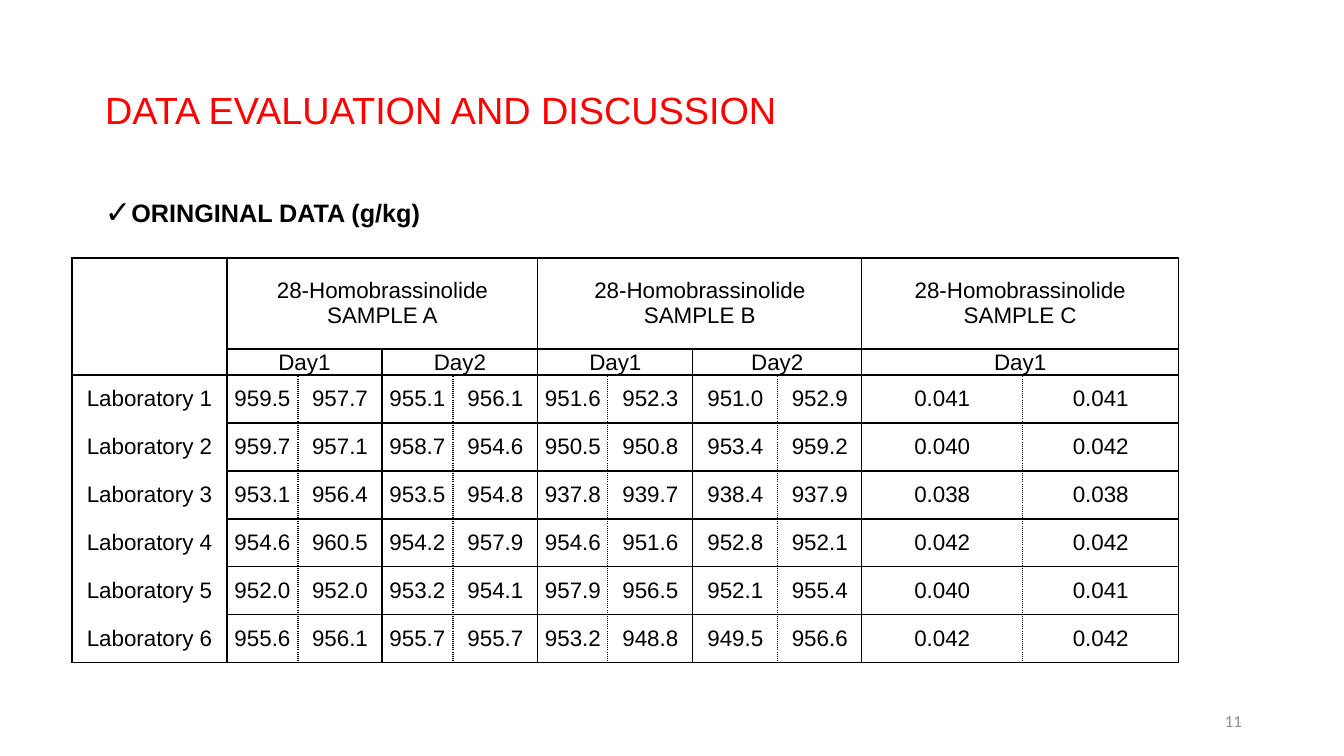
from lxml import etree
from pptx import Presentation, util as u
from pptx.dml.color import RGBColor
from pptx.enum import text
from pptx.oxml.ns import qn

BLACK = RGBColor(0x00, 0x00, 0x00)
RED = RGBColor(0xFF, 0x00, 0x00)
GRAY = RGBColor(0x8C, 0x8C, 0x8C)
PX = u.Inches(1) / 100.8

LEFT, CENTER, RIGHT = text.PP_ALIGN.LEFT, text.PP_ALIGN.CENTER, text.PP_ALIGN.RIGHT
TOP, MIDDLE, BOTTOM = (text.MSO_ANCHOR.TOP, text.MSO_ANCHOR.MIDDLE,
                       text.MSO_ANCHOR.BOTTOM)

COLUMNS = [155, 71, 84, 71, 85, 70, 85, 85, 84, 161, 156]
ROWS = [91, 26] + [48] * 6
SAMPLES = [  # first column, columns spanned, heading
    (1, 4, "28-Homobrassinolide\nSAMPLE A"),
    (5, 4, "28-Homobrassinolide\nSAMPLE B"),
    (9, 2, "28-Homobrassinolide SAMPLE C"),
]
DAYS = ["Day1", "Day2", "Day1", "Day2", "Day1"]
RESULTS = [
    "959.5 957.7 955.1 956.1 951.6 952.3 951.0 952.9 0.041 0.041",
    "959.7 957.1 958.7 954.6 950.5 950.8 953.4 959.2 0.040 0.042",
    "953.1 956.4 953.5 954.8 937.8 939.7 938.4 937.9 0.038 0.038",
    "954.6 960.5 954.2 957.9 954.6 951.6 952.8 952.1 0.042 0.042",
    "952.0 952.0 953.2 954.1 957.9 956.5 952.1 955.4 0.040 0.041",
    "955.6 956.1 955.7 955.7 953.2 948.8 949.5 956.6 0.042 0.042",
]


def px(n):
    return u.Emu(round(n * PX))


class Deck:
    font, ink = "Arial", BLACK

    def __init__(self, width, height):
        self.prs = Presentation()
        self.prs.slide_width, self.prs.slide_height = px(width), px(height)
        self.s = self.prs.slides.add_slide(self.prs.slide_layouts[5])

    def style(self, p, size, color=None, font=None, bold=False, align=LEFT):
        p.alignment = align
        p.font.size, p.font.bold = u.Pt(size), bold
        p.font.name = font or self.font
        p.font.color.rgb = color or self.ink

    def fill_text(self, sp, words, anchor, **style):
        tf = sp.text_frame
        tf.word_wrap, tf.auto_size = True, text.MSO_AUTO_SIZE.NONE
        tf.vertical_anchor = anchor
        tf.text = words
        p = tf.paragraphs[0]
        self.style(p, **style)
        return p

    def title(self, x, y, w, h, words, **style):
        sp = self.s.shapes.title
        sp.left, sp.top, sp.width, sp.height = map(px, (x, y, w, h))
        self.fill_text(sp, words, MIDDLE, **style).line_spacing = 0.9

    def text(self, x, y, w, h, words, anchor=TOP, **style):
        sp = self.s.shapes.add_textbox(*map(px, (x, y, w, h)))
        return self.fill_text(sp, words, anchor, **style)

    def bullet(self, p, char, indent, percent):
        pPr = p._p.get_or_add_pPr()
        pPr.set("marL", str(px(indent)))
        pPr.set("indent", str(-px(indent)))
        marks = [("buSzPct", "val", str(percent * 1000)),
                 ("buFont", "typeface", self.font), ("buChar", "char", char)]
        for i, (tag, key, value) in enumerate(marks):
            mark = etree.Element(qn("a:" + tag), {key: value})
            default = pPr.find(qn("a:defRPr"))
            pPr.insert(pPr.index(default), mark)

    def table(self, x, y, columns, rows):
        size = map(px, (x, y, sum(columns), sum(rows)))
        tbl = self.s.shapes.add_table(len(rows), len(columns), *size).table
        tbl.first_row = tbl.horz_banding = False
        for column, w in zip(tbl.columns, columns):
            column.width = px(w)
        for row, h in zip(tbl.rows, rows):
            row.height = px(h)
        return tbl

    def cell(self, cell, words="", anchor=MIDDLE, sides="LRTB", dotted=""):
        cell.margin_left = cell.margin_right = px(5)
        cell.margin_top = cell.margin_bottom = 0
        cell.vertical_anchor = anchor
        cell.text = words
        for p in cell.text_frame.paragraphs:
            self.style(p, 16, align=CENTER)
        cell.fill.background()
        # Borders come before the fill, in the order left, right, top, bottom
        tcPr = cell._tc.get_or_add_tcPr()
        for i, side in enumerate("LRTB"):
            ln = etree.Element(qn("a:ln" + side), w=str(u.Pt(1)))
            tcPr.insert(i, ln)
            if side not in sides:
                etree.SubElement(ln, qn("a:noFill"))
                continue
            fill = etree.SubElement(ln, qn("a:solidFill"))
            etree.SubElement(fill, qn("a:srgbClr"), val=str(self.ink))
            dash = "sysDot" if side in dotted else "solid"
            etree.SubElement(ln, qn("a:prstDash"), val=dash)


def main():
    d = Deck(1344, 756)

    # Heading and subheading
    d.title(95, 51, 819, 122, "DATA EVALUATION AND DISCUSSION", size=27, color=RED)
    p = d.text(95, 186, 819, 50, "ORINGINAL DATA (g/kg)", size=18, bold=True)
    p.line_spacing, p.space_before = 1.2, u.Pt(7.5)
    d.bullet(p, "✓", 19, 125)

    # Table headings
    tbl = d.table(72, 258, COLUMNS, ROWS)
    for r in range(2):
        for c in range(len(COLUMNS)):
            d.cell(tbl.cell(r, c))
    headings = [(0, c, span, words, MIDDLE) for c, span, words in SAMPLES]
    headings += [(1, 1 + 2 * i, 2, day, BOTTOM) for i, day in enumerate(DAYS)]
    for r, c, span, words, anchor in headings:
        d.cell_text = tbl.cell(r, c)
        tbl.cell(r, c).merge(tbl.cell(r, c + span - 1))
        tbl.cell(r, c).text = words
        tbl.cell(r, c).vertical_anchor = anchor
        for p in tbl.cell(r, c).text_frame.paragraphs:
            d.style(p, 16, align=CENTER)
    tbl.cell(0, 0).merge(tbl.cell(1, 0))

    # Laboratory results, each day's pair split by a dotted line
    for i, line in enumerate(RESULTS):
        sides = "LR" + "T" * (i == 0) + "B" * (i == len(RESULTS) - 1)
        d.cell(tbl.cell(i + 2, 0), f"Laboratory {i + 1}", sides=sides)
        for c, value in enumerate(line.split(), 1):
            d.cell(tbl.cell(i + 2, c), value, dotted="R" if c % 2 else "L")

    # Page number
    d.text(950, 701, 302, 40, "11", MIDDLE, size=12, color=GRAY,
           font="Calibri", align=RIGHT)

    d.prs.save("out.pptx")


if __name__ == "__main__":
    main()
